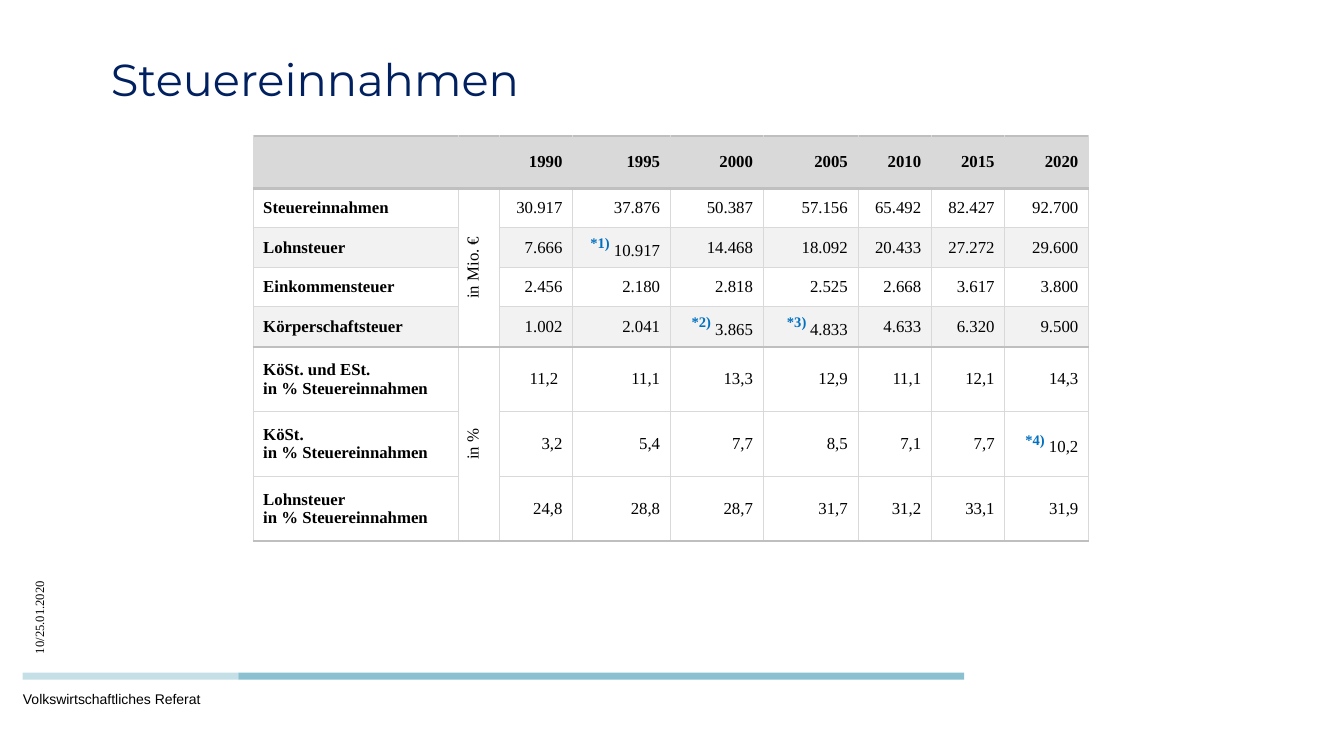
from pptx import Presentation
from pptx.dml.color import RGBColor
from pptx.enum import shapes, text
from pptx.oxml import parse_xml
from pptx.oxml.ns import nsdecls, qn
from pptx.util import Cm, Pt
from lxml import etree

NAVY = RGBColor(0x00, 0x20, 0x60)
BLACK = RGBColor(0x00, 0x00, 0x00)
NOTE_BLUE = RGBColor(0x00, 0x70, 0xC0)
TEAL = RGBColor(0x8A, 0xC0, 0xCF)
HEADER_GREY = RGBColor(0xD9, 0xD9, 0xD9)
BAND_GREY = RGBColor(0xF2, 0xF2, 0xF2)
RULE_GREY = RGBColor(0xBF, 0xBF, 0xBF)
SERIF = "Times New Roman"

THIN, HEAVY = (HEADER_GREY, 0.5), (RULE_GREY, 2.25)
HEAVY_EDGES = {0, 1, 5, 8}
BANDED_ROWS = {2, 4}
UNIT_COL = 1
UNIT_SPANS = [(1, 4), (5, 7)]
COL_WIDTHS = [5.18, 1.02, 1.85, 2.46, 2.34, 2.39, 1.85, 1.85, 2.11]
ROW_HEIGHTS = [1.32] + [0.98] * 4 + [1.63] * 3

# A pair holds a raised footnote mark and the value after it.
ROWS = [
    ["", "", "1990", "1995", "2000", "2005", "2010", "2015", "2020"],
    ["Steuereinnahmen", "in Mio. €", "30.917", "37.876", "50.387", "57.156",
     "65.492", "82.427", "92.700"],
    ["Lohnsteuer", "", "7.666", ("*1)", " 10.917"), "14.468", "18.092",
     "20.433", "27.272", "29.600"],
    ["Einkommensteuer", "", "2.456", "2.180", "2.818", "2.525",
     "2.668", "3.617", "3.800"],
    ["Körperschaftsteuer", "", "1.002", "2.041", ("*2)", " 3.865"),
     ("*3) ", "4.833"), "4.633", "6.320", "9.500"],
    ["KöSt. und ESt.\nin % Steuereinnahmen", "in %", "11,2 ", "11,1", "13,3",
     "12,9", "11,1", "12,1", "14,3"],
    ["KöSt.\nin % Steuereinnahmen", "", "3,2", "5,4", "7,7", "8,5",
     "7,1", "7,7", ("*4)", " 10,2")],
    ["Lohnsteuer\nin % Steuereinnahmen", "", "24,8", "28,8", "28,7", "31,7",
     "31,2", "33,1", "31,9"],
]


def style(font, name, size, color, bold=False):
    font.name, font.size, font.bold = name, Pt(size), bold
    font.color.rgb = color


def add_title(s, left, top, width, height):
    sp = s.shapes.title
    sp.left, sp.top, sp.width, sp.height = Cm(left), Cm(top), Cm(width), Cm(height)
    tf = sp.text_frame
    tf.text = "Steuereinnahmen"
    tf.vertical_anchor = text.MSO_ANCHOR.MIDDLE
    p = tf.paragraphs[0]
    p.alignment = text.PP_ALIGN.LEFT
    style(p.runs[0].font, "Montserrat", 32, NAVY)


def add_label(s, words, left, top, width, height, font, size, rotation=0):
    sp = s.shapes.add_textbox(Cm(left), Cm(top), Cm(width), Cm(height))
    sp.rotation = rotation
    tf = sp.text_frame
    tf.word_wrap = True
    tf.text = words
    style(tf.paragraphs[0].runs[0].font, font, size, BLACK)


def add_bar(s, left, top, width, height, opacity=100):
    sp = s.shapes.add_shape(shapes.MSO_SHAPE.RECTANGLE,
                            Cm(left), Cm(top), Cm(width), Cm(height))
    sp.shadow.inherit = False
    sp.line.fill.background()
    sp.fill.solid()
    sp.fill.fore_color.rgb = TEAL
    if opacity < 100:
        color = sp.fill._xPr.find(".//" + qn("a:srgbClr"))
        etree.SubElement(color, qn("a:alpha"), val=str(opacity * 1000))


def add_footer(s, left, top):
    """Place the two-part bar at left, top with the label below and the date above."""
    pale, full, thickness = 5.44, 18.29, 0.18
    add_bar(s, left + pale, top, full, thickness)
    add_bar(s, left, top, pale, thickness, opacity=50)
    add_label(s, "Volkswirtschaftliches Referat",
              left - 0.24, top + 0.32, 9.6, 0.66, "Arial", 10)
    add_label(s, "10/25.01.2020",
              left - 1.28, top - 2.24, 3.4, 0.64, SERIF, 9, rotation=270)


def set_borders(cell, top, bottom):
    tcPr = cell._tc.get_or_add_tcPr()
    for side, (color, width) in zip("LRTB", (THIN, THIN, top, bottom)):
        tcPr.append(parse_xml(
            f'<a:ln{side} {nsdecls("a")} w="{Pt(width)}"><a:solidFill>'
            f'<a:srgbClr val="{color}"/></a:solidFill></a:ln{side}>'))


def fill_cell(cell, r, c, value):
    edges = [HEAVY if c == UNIT_COL or edge in HEAVY_EDGES else THIN
             for edge in (r, r + 1)]
    set_borders(cell, *edges)
    if r == 0 or (r in BANDED_ROWS and c != UNIT_COL):
        cell.fill.solid()
        cell.fill.fore_color.rgb = HEADER_GREY if r == 0 else BAND_GREY
    else:
        cell.fill.background()

    mark, value = value if isinstance(value, tuple) else ("", value)
    cell.vertical_anchor = text.MSO_ANCHOR.MIDDLE
    cell.text = mark or value
    for p in cell.text_frame.paragraphs:
        style(p.font, SERIF, 12, BLACK)
        if c == UNIT_COL:
            p.alignment = text.PP_ALIGN.CENTER
        elif c > UNIT_COL:
            p.alignment = text.PP_ALIGN.RIGHT
        if mark:
            style(p.runs[0].font, SERIF, 18, NOTE_BLUE, bold=True)
            p.runs[0].font._element.set("baseline", "30000")
            p.add_run().text = value
        for run in p.runs[1 if mark else 0:]:
            style(run.font, SERIF, 12, BLACK, bold=r == 0 or c == 0)


def add_tax_table(s, left, top):
    tbl = s.shapes.add_table(len(ROW_HEIGHTS), len(COL_WIDTHS), Cm(left), Cm(top),
                             Cm(sum(COL_WIDTHS)), Cm(sum(ROW_HEIGHTS))).table
    tbl.first_row = tbl.horz_banding = False
    for col, width in zip(tbl.columns, COL_WIDTHS):
        col.width = Cm(width)
    for row, height in zip(tbl.rows, ROW_HEIGHTS):
        row.height = Cm(height)
    for r, values in enumerate(ROWS):
        for c, value in enumerate(values):
            fill_cell(tbl.cell(r, c), r, c, value)
    for first, count in UNIT_SPANS:
        cell = tbl.cell(first, UNIT_COL)
        cell.merge(tbl.cell(min(first + count, len(ROWS)) - 1, UNIT_COL))
        cell._tc.get_or_add_tcPr().set("vert", "vert270")


def main():
    prs = Presentation()
    prs.slide_width, prs.slide_height = Cm(33.87), Cm(19.05)
    s = prs.slides.add_slide(prs.slide_layouts[5])
    add_footer(s, 0.57, 16.95)
    add_title(s, 2.54, 0.84, 28.78, 2.29)
    add_tax_table(s, 6.38, 3.43)
    prs.save("out.pptx")


if __name__ == "__main__":
    main()
